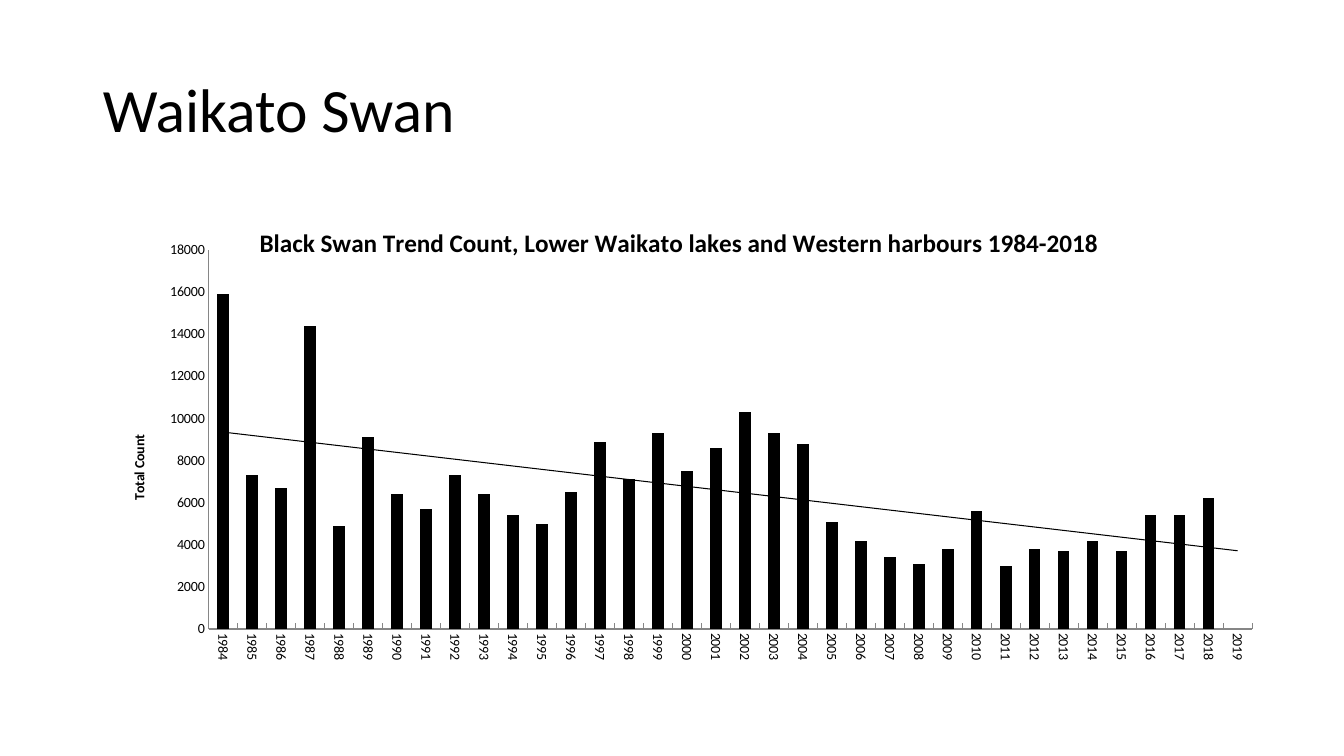
from lxml import etree
from pptx import Presentation
from pptx import util as u
from pptx.chart.data import CategoryChartData
from pptx.dml.color import RGBColor
from pptx.enum import chart as c, text
from pptx.oxml import parse_xml
from pptx.oxml.ns import nsdecls, qn

THEME = {
    "font": "Calibri",
    "ink": RGBColor.from_string("000000"),
    "axis": RGBColor.from_string("868686"),
    "title": u.Pt(44),
    "chart_title": u.Pt(18),
    "label": u.Pt(10),
}
FIRST_YEAR, LAST_YEAR = 1984, 2019
SWAN_COUNTS = [
    15900, 7300, 6700, 14400, 4900, 9100, 6400, 5700, 7300, 6400, 5400, 5000,
    6500, 8900, 7100, 9300, 7500, 8600, 10300, 9300, 8800, 5100, 4200, 3400,
    3100, 3800, 5600, 3000, 3800, 3700, 4200, 3700, 5400, 5400, 6200, None,
]


def format_font(font, size, bold=False):
    values = {"name": THEME["font"], "size": size, "bold": bold}
    for name, value in values.items():
        setattr(font, name, value)
    font.color.rgb = THEME["ink"]


def place(parent, before, **shares):
    """Lay out a chart part by shares of the chart, ahead of the first `before` tag."""
    for old in parent.findall(qn("c:layout")):
        parent.remove(old)
    layout = parse_xml(f"<c:layout {nsdecls('c')}><c:manualLayout/></c:layout>")
    target = "<c:layoutTarget val='inner'/>" if "w" in shares else ""
    modes = "".join(f"<c:{side}Mode val='edge'/>" for side in "xy")
    sizes = "".join(f"<c:{side} val='{share}'/>" for side, share in shares.items())
    layout[0].extend(etree.fromstring(f"<r {nsdecls('c')}>{target}{modes}{sizes}</r>"))
    next(child for child in parent if child.tag in map(qn, before)).addprevious(layout)


presentation = Presentation()
presentation.slide_width = u.Inches(13.33)
presentation.slide_height = u.Inches(7.5)
width, height = presentation.slide_width, presentation.slide_height
slide = presentation.slides.add_slide(presentation.slide_layouts[5])

left, content_width = int(width * 0.069), int(width * 0.863)

# Slide title
title = slide.shapes.title
title_box = {"left": left, "top": int(height * 0.053),
             "width": content_width, "height": int(height * 0.193)}
for name, value in title_box.items():
    setattr(title, name, value)
title.text_frame.text = "Waikato Swan"
title.text_frame.vertical_anchor = text.MSO_ANCHOR.MIDDLE
paragraph = title.text_frame.paragraphs[0]
paragraph.alignment = text.PP_ALIGN.LEFT
paragraph.line_spacing = 0.9
format_font(paragraph.runs[0].font, THEME["title"])

# Column chart
chart_data = CategoryChartData()
chart_data.categories = [str(year) for year in range(FIRST_YEAR, LAST_YEAR + 1)]
chart_data.add_series("Series 1", SWAN_COUNTS)
chart = slide.shapes.add_chart(
    c.XL_CHART_TYPE.COLUMN_CLUSTERED, left, int(height * 0.267),
    content_width, int(height * 0.635), chart_data).chart
chart.has_legend = False
format_font(chart.font, THEME["label"])

plot = chart.plots[0]
plot.gap_width = 150
plot.vary_by_categories = False
series = plot.series[0]
series.format.fill.solid()
series.format.fill.fore_color.rgb = THEME["ink"]

# Linear trend line
trend = parse_xml(
    f"<c:trendline {nsdecls('c', 'a')}><c:spPr><a:ln w='9525'><a:solidFill>"
    f"<a:srgbClr val='{THEME['ink']}'/></a:solidFill></a:ln></c:spPr>"
    "<c:trendlineType val='linear'/><c:dispRSqr val='0'/><c:dispEq val='0'/></c:trendline>")
series._element.find(qn("c:cat")).addprevious(trend)

# Axes
years, counts = chart.category_axis, chart.value_axis
for axis, tick_mark in ((years, c.XL_TICK_MARK.INSIDE), (counts, c.XL_TICK_MARK.NONE)):
    axis_format = {"has_major_gridlines": False, "major_tick_mark": tick_mark,
                   "minor_tick_mark": c.XL_TICK_MARK.NONE}
    for name, value in axis_format.items():
        setattr(axis, name, value)
    axis.format.line.color.rgb = THEME["axis"]
    axis.format.line.width = u.Pt(0.75)
    format_font(axis.tick_labels.font, THEME["label"])
years._element.find(qn("c:txPr")).find(qn("a:bodyPr")).set("rot", "5400000")
counts.minimum_scale, counts.maximum_scale, counts.major_unit = 0, 18000, 2000

# Chart and axis titles
titles = [
    (chart, "chart_title", 0.14, 0.04,
     "Black Swan Trend Count, Lower Waikato lakes and Western harbours 1984-2018"),
    (counts.axis_title, "label", 0.03, 0.48, "Total Count"),
]
for owner, size, x, y, wording in titles:
    heading = owner.chart_title if owner is chart else owner
    heading.text_frame.text = wording
    format_font(heading.text_frame.paragraphs[0].runs[0].font, THEME[size], bold=True)
    place(heading._element, ["c:overlay"], x=x, y=y)
chart.chart_title.include_in_layout = True
counts.axis_title.text_frame._txBody.find(qn("a:bodyPr")).set("rot", "-5400000")

plot_area = chart._chartSpace.chart.plotArea
place(plot_area, ["c:barChart"], x=0.1, y=0.1, w=0.9, h=0.79)

presentation.save("out.pptx")
